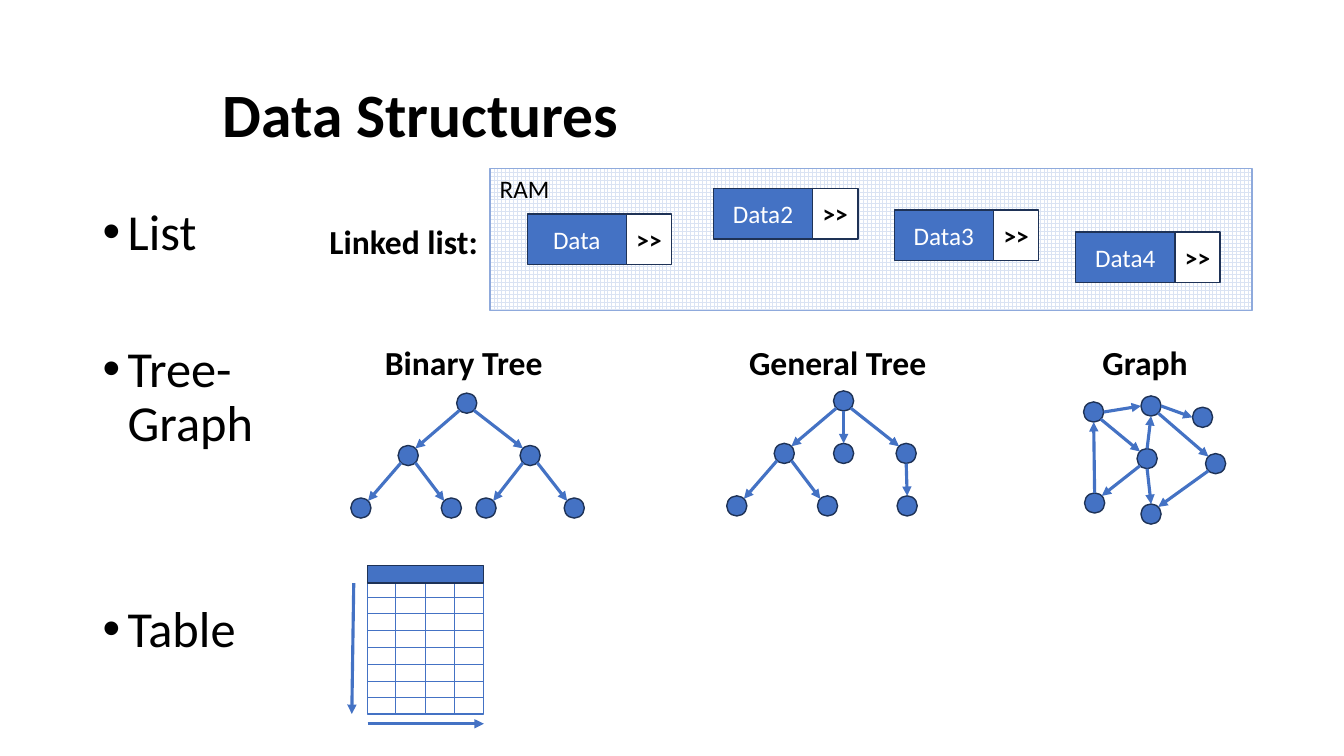
"""Build a slide that shows lists, trees, a graph and a table as data structures."""
from dataclasses import dataclass
from enum import Enum
from typing import Any, NamedTuple

from lxml.etree import SubElement
from pptx import Presentation
from pptx.dml.color import RGBColor
from pptx.enum.dml import MSO_PATTERN
from pptx.enum.shapes import MSO_CONNECTOR as Link, MSO_SHAPE as Preset
from pptx.enum.text import MSO_ANCHOR as Anchor, PP_ALIGN as Align
from pptx.oxml.ns import qn
from pptx.util import Pt

BLUE = RGBColor(0x44, 0x72, 0xC4)
NAVY = RGBColor(0x1E, 0x32, 0x56)
SKY = RGBColor(0x8F, 0xAA, 0xDC)
PALE = RGBColor(0xDA, 0xE3, 0xF3)
WHITE = RGBColor(0xFF, 0xFF, 0xFF)
BLACK = RGBColor(0, 0, 0)

TITLE = {"name": "Calibri", "size": Pt(44), "bold": True}
BODY = {"name": "Calibri", "size": Pt(36)}
LABEL = {"name": "Calibri", "size": Pt(24), "bold": True}
CELL = {"name": "Calibri", "size": Pt(18)}
POINTER = CELL | {"bold": True}

RADIUS = 7.2
DIAGONAL = 5.1
DATA_WIDTH, POINTER_WIDTH, CELL_HEIGHT = 70.8, 32.4, 36


class Area(NamedTuple):
    left: float
    top: float
    width: float
    height: float


class Spot(NamedTuple):
    x: float
    y: float


class Side(Enum):
    N = Spot(0, -RADIUS)
    E = Spot(RADIUS, 0)
    S = Spot(0, RADIUS)
    W = Spot(-RADIUS, 0)
    NE = Spot(DIAGONAL, -DIAGONAL)
    SE = Spot(DIAGONAL, DIAGONAL)
    SW = Spot(-DIAGONAL, DIAGONAL)
    NW = Spot(-DIAGONAL, -DIAGONAL)


class Edge(NamedTuple):
    start: int
    exit: Side
    end: int
    entry: Side


class ListItem(NamedTuple):
    text: str
    left: float
    top: float


class Bullet(NamedTuple):
    text: str
    space: float


@dataclass
class Diagram:
    label: str
    area: Area
    nodes: list[Spot]
    edges: list[Edge]


LIST_ITEMS = [
    ListItem("Data", 376.6, 152.8),
    ListItem("Data2", 509.6, 134.7),
    ListItem("Data3", 638.8, 150.1),
    ListItem("Data4", 768.4, 165.8),
]
BULLETS = [Bullet("List", 10), Bullet("Tree-Graph", 59), Bullet("Table", 108)]
DIAGRAMS = [
    Diagram(
        "Binary Tree", Area(267.1, 240.5, 128.2, 36),
        [Spot(333.4, 288), Spot(291.6, 325.4), Spot(378.7, 325.4), Spot(257.8, 362.9),
         Spot(322.4, 362.9), Spot(347.2, 362.9), Spot(410.2, 362.9)],
        [Edge(0, Side.SW, 1, Side.NE), Edge(0, Side.SE, 2, Side.NW),
         Edge(1, Side.SW, 3, Side.NE), Edge(1, Side.SE, 4, Side.NW),
         Edge(2, Side.SW, 5, Side.NE), Edge(2, Side.SE, 6, Side.NW)],
    ),
    Diagram(
        "General Tree", Area(527, 240.5, 142.6, 36),
        [Spot(602.6, 286.4), Spot(560.2, 323.9), Spot(602.6, 323.9), Spot(647.3, 323.9),
         Spot(526.3, 361.4), Spot(591.1, 361.4), Spot(648, 361.4)],
        [Edge(0, Side.SW, 1, Side.NE), Edge(0, Side.S, 2, Side.N),
         Edge(0, Side.SE, 3, Side.NW), Edge(1, Side.SW, 4, Side.NE),
         Edge(1, Side.SE, 5, Side.NW), Edge(3, Side.S, 6, Side.N)],
    ),
    Diagram(
        "Graph", Area(779.8, 240.5, 76.3, 36),
        [Spot(822.2, 290), Spot(859, 298.1), Spot(822.2, 367.2), Spot(868.3, 331.2),
         Spot(781.2, 294.3), Spot(819.4, 327.6), Spot(781.9, 359.3)],
        [Edge(4, Side.SE, 5, Side.NW), Edge(4, Side.E, 0, Side.W),
         Edge(0, Side.SE, 3, Side.NW), Edge(5, Side.N, 0, Side.S),
         Edge(0, Side.E, 1, Side.W), Edge(5, Side.SW, 6, Side.NE),
         Edge(5, Side.S, 2, Side.N), Edge(6, Side.N, 4, Side.S),
         Edge(3, Side.SW, 2, Side.NE)],
    ),
]


def set_format(target: Any, values: dict[str, Any]) -> None:
    for name, value in values.items():
        setattr(target, name, value)


def write(para: Any, text: str, style: dict[str, Any], color: RGBColor = BLACK) -> None:
    span = para.add_run()
    span.text = text
    set_format(span.font, style)
    span.font.color.rgb = color


def add_text(page: Any, area: Area, text: str, style: dict[str, Any],
             align: Align = Align.LEFT) -> None:
    box = page.shapes.add_textbox(*map(Pt, area))
    box.text_frame.word_wrap = False
    para = box.text_frame.paragraphs[0]
    para.alignment = align
    write(para, text, style)


def add_box(page: Any, area: Area, fill: RGBColor, border: RGBColor = NAVY,
            preset: Preset = Preset.RECTANGLE) -> Any:
    box = page.shapes.add_shape(preset, *map(Pt, area))
    box.shadow.inherit = False
    box.fill.solid()
    box.fill.fore_color.rgb = fill
    box.line.color.rgb = border
    box.line.width = Pt(1)
    return box


def add_cell(page: Any, area: Area, text: str, fill: RGBColor,
             style: dict[str, Any], color: RGBColor) -> None:
    frame = add_box(page, area, fill).text_frame
    set_format(frame, {"word_wrap": True, "vertical_anchor": Anchor.MIDDLE})
    para = frame.paragraphs[0]
    para.alignment = Align.CENTER
    write(para, text, style, color)


def add_line(page: Any, start: Spot, end: Spot, width: float = 0.5, arrow: bool = False) -> None:
    line = page.shapes.add_connector(Link.STRAIGHT, *map(Pt, (*start, *end)))
    line.line.color.rgb = BLUE
    line.line.width = Pt(width)
    properties = line._element.spPr
    if arrow:
        SubElement(properties.find(qn("a:ln")), qn("a:tailEnd"), type="triangle")
    SubElement(properties, qn("a:effectLst"))


def add_bullets(page: Any) -> None:
    frame = page.shapes.add_textbox(*map(Pt, (66.2, 144, 151.2, 342.7))).text_frame
    frame.word_wrap = True
    for index, bullet in enumerate(BULLETS):
        para = frame.add_paragraph() if index else frame.paragraphs[0]
        set_format(para, {"line_spacing": 0.9, "space_before": Pt(bullet.space)})
        write(para, bullet.text, BODY)
        properties = para._p.get_or_add_pPr()
        set_format_xml = {"marL": str(Pt(18)), "indent": str(Pt(-18))}
        properties.attrib.update(set_format_xml)
        SubElement(properties, qn("a:buFont"), typeface="Arial")
        SubElement(properties, qn("a:buChar"), char="•")


def add_linked_list(page: Any) -> None:
    memory = add_box(page, Area(349.9, 120.2, 544.3, 101.5), WHITE, SKY)
    memory.fill.patterned()
    memory.fill.pattern = MSO_PATTERN.LARGE_GRID
    memory.fill.fore_color.rgb = PALE
    memory.fill.back_color.rgb = WHITE
    add_text(page, Area(228.2, 154.1, 121.7, 36), "Linked list:", LABEL)
    for text, left, top in LIST_ITEMS:
        add_cell(page, Area(left, top, DATA_WIDTH, CELL_HEIGHT), text, BLUE, CELL, WHITE)
        add_cell(page, Area(left + DATA_WIDTH, top, POINTER_WIDTH, CELL_HEIGHT),
                 ">>", WHITE, POINTER, BLACK)
    add_text(page, Area(349.9, 120.2, 50.4, 28.8), "RAM", CELL)


def add_diagram(page: Any, diagram: Diagram) -> None:
    add_text(page, diagram.area, diagram.label, LABEL, Align.CENTER)
    for x, y in diagram.nodes:
        area = Area(x - RADIUS, y - RADIUS, 2 * RADIUS, 2 * RADIUS)
        add_box(page, area, BLUE, preset=Preset.OVAL)
    for edge in diagram.edges:
        start, end = diagram.nodes[edge.start], diagram.nodes[edge.end]
        leave, enter = edge.exit.value, edge.entry.value
        add_line(page, Spot(start.x + leave.x, start.y + leave.y),
                 Spot(end.x + enter.x, end.y + enter.y), 2.25, True)


def add_grid(page: Any) -> None:
    left, top, right, bottom = 262.6, 416.6, 345.6, 510
    add_box(page, Area(left, top, right - left, bottom - top), WHITE, BLUE)
    for row in range(7):
        y = 426.4 + 12 * row
        add_line(page, Spot(left, y), Spot(right, y))
    for column in range(3):
        x = 282.3 + 21.2 * column
        add_line(page, Spot(x, top), Spot(x, bottom))
    add_box(page, Area(left, 404, right - left, 12.4), BLUE)
    add_line(page, Spot(252.7, top), Spot(251.3, bottom), 2.25, True)
    add_line(page, Spot(left, 517), Spot(right, 517), 2.25, True)


def main() -> None:
    deck = Presentation()
    set_format(deck, {"slide_width": Pt(960), "slide_height": Pt(540)})
    page = deck.slides.add_slide(deck.slide_layouts[6])
    add_text(page, Area(151.9, 50.8, 742.3, 60.4), "Data Structures", TITLE)
    add_bullets(page)
    add_linked_list(page)
    for diagram in DIAGRAMS:
        add_diagram(page, diagram)
    add_grid(page)
    deck.save("out.pptx")


if __name__ == "__main__":
    main()
